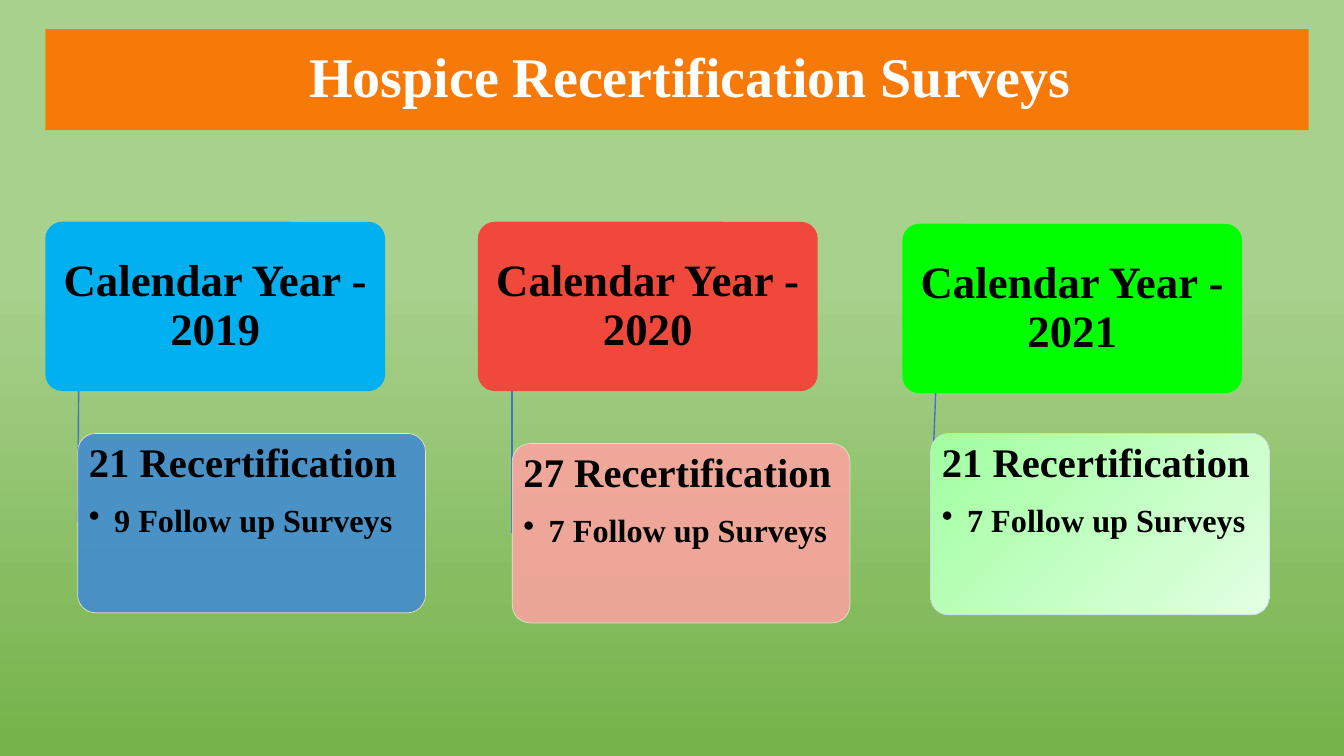
from dataclasses import dataclass

from pptx import Presentation
from pptx.dml.color import RGBColor
from pptx.enum import shapes, text
from pptx.oxml.ns import qn
from pptx.util import Inches, Pt

TITLE = "Hospice Recertification Surveys"
YEAR_SIZE = (3.37, 1.68)

# Positions are (left, top); line is (start x, end x, length); card is (left, top, width, height).
YEARS = [
    dict(heading="Calendar Year - 2019", at=(0.45, 2.2), color="00B0F0",
         line=(0.78, 0.77, 1.3), card=(0.77, 4.3, 3.45, 1.78),
         card_fill=["438CCF"], border="FFE8CC",
         surveys="21 Recertification", follow_up="9 Follow up Surveys"),
    dict(heading="Calendar Year - 2020", at=(4.74, 2.2), color="F0493C",
         line=(5.08, 5.08, 1.41), card=(5.08, 4.4, 3.35, 1.78),
         card_fill=["F8A49E"], border="CCF6D3",
         surveys="27 Recertification", follow_up="7 Follow up Surveys"),
    dict(heading="Calendar Year - 2021", at=(8.95, 2.22), color="00FF00",
         line=(9.28, 9.23, 1.3), card=(9.23, 4.3, 3.36, 1.8),
         card_fill=["A0FFA0", "E3FFE3"], border="CFD6EA",
         surveys="21 Recertification", follow_up="7 Follow up Surveys"),
]


@dataclass(frozen=True)
class Theme:
    font: str = "Times New Roman"
    ink: str = "000000"
    title_ink: str = "FFFFFF"
    banner: str = "F77A09"
    line: str = "4472C4"
    ground: tuple = ("74B349", "A9D18E")
    title_size: int = 40
    heading_size: int = 32
    surveys_size: int = 29
    follow_up_size: int = 23


THEME = Theme()


def rgb(value):
    return RGBColor.from_string(value)


def set_all(target, **values):
    for name, value in values.items():
        setattr(target, name, value)


def fill_solid(shape, color):
    shape.fill.solid()
    shape.fill.fore_color.rgb = rgb(color)


def fill_gradient(fill, colors, angle, end=1.0):
    fill.gradient()
    fill.gradient_angle = angle
    for stop, color, position in zip(fill.gradient_stops, colors, (0, end)):
        stop.color.rgb = rgb(color)
        stop.position = position


def set_opacity(color_parent, percent):
    color = color_parent.find(".//" + qn("a:srgbClr"))
    alpha = color.makeelement(qn("a:alpha"), {"val": str(percent * 1000)})
    color.append(alpha)


def write(paragraph, words, size, color=THEME.ink, align=text.PP_ALIGN.LEFT, after=0):
    set_all(paragraph, alignment=align, line_spacing=0.9, space_after=Pt(after))
    run = paragraph.add_run()
    run.text = words
    set_all(run.font, name=THEME.font, size=Pt(size), bold=True)
    run.font.color.rgb = rgb(color)


def add_bullet(paragraph):
    properties = paragraph._p.get_or_add_pPr()
    indent = Inches(0.25)
    properties.set("marL", str(indent))
    properties.set("indent", str(-indent))
    bullet = properties.makeelement(qn("a:buChar"), {"char": "•"})
    properties.append(bullet)


def add_rounded(slide, box, anchor, side_inset):
    shape = slide.shapes.add_shape(shapes.MSO_SHAPE.ROUNDED_RECTANGLE, *map(Inches, box))
    shape.adjustments[0] = 0.1
    shape.shadow.inherit = False
    set_all(shape.text_frame, word_wrap=True, vertical_anchor=anchor,
            margin_left=Inches(side_inset), margin_right=Inches(side_inset),
            margin_top=Inches(0.04), margin_bottom=Inches(0.04))
    return shape


def add_title(slide):
    title = slide.shapes.title
    set_all(title, left=Inches(0.45), top=Inches(0.29),
            width=Inches(12.53), height=Inches(1))
    fill_solid(title, THEME.banner)
    set_all(title.text_frame, vertical_anchor=text.MSO_ANCHOR.MIDDLE,
            margin_left=Inches(0.36), margin_right=Inches(0.1))
    write(title.text_frame.paragraphs[0], TITLE, THEME.title_size,
          THEME.title_ink, text.PP_ALIGN.CENTER)


def add_year(slide, year):
    heading = add_rounded(slide, year["at"] + YEAR_SIZE, text.MSO_ANCHOR.MIDDLE, 0.07)
    fill_solid(heading, year["color"])
    heading.line.fill.background()
    write(heading.text_frame.paragraphs[0], year["heading"], THEME.heading_size,
          align=text.PP_ALIGN.CENTER)


def add_line(slide, year):
    start, end, length = year["line"]
    top = year["at"][1] + YEAR_SIZE[1]
    line = slide.shapes.add_connector(
        shapes.MSO_CONNECTOR.STRAIGHT, *map(Inches, (start, top, end, top + length)))
    line.line.color.rgb = rgb(THEME.line)
    line.line.width = Pt(1)
    properties = line._element.spPr
    properties.append(properties.makeelement(qn("a:effectLst"), {}))


def add_card(slide, year):
    card = add_rounded(slide, year["card"], text.MSO_ANCHOR.TOP, 0.06)
    colors = year["card_fill"]
    if len(colors) == 1:
        fill_solid(card, colors[0])
        set_opacity(card._element.spPr.find(qn("a:solidFill")), 90)
    else:
        fill_gradient(card.fill, colors, 315)
    card.line.color.rgb = rgb(year["border"])
    card.line.width = Pt(0.5)
    set_opacity(card._element.spPr.find(qn("a:ln")), 90)
    surveys = card.text_frame.paragraphs[0]
    write(surveys, year["surveys"], THEME.surveys_size, after=13)
    follow_up = card.text_frame.add_paragraph()
    follow_up.level = 1
    write(follow_up, year["follow_up"], THEME.follow_up_size)
    add_bullet(follow_up)


def main():
    presentation = Presentation()
    set_all(presentation, slide_width=Inches(13.33), slide_height=Inches(7.5))
    slide = presentation.slides.add_slide(presentation.slide_layouts[5])
    fill_gradient(slide.background.fill, THEME.ground, 90, 0.64)
    add_title(slide)
    for year in YEARS:
        add_year(slide, year)
        add_line(slide, year)
        add_card(slide, year)
    presentation.save("out.pptx")


if __name__ == "__main__":
    main()
